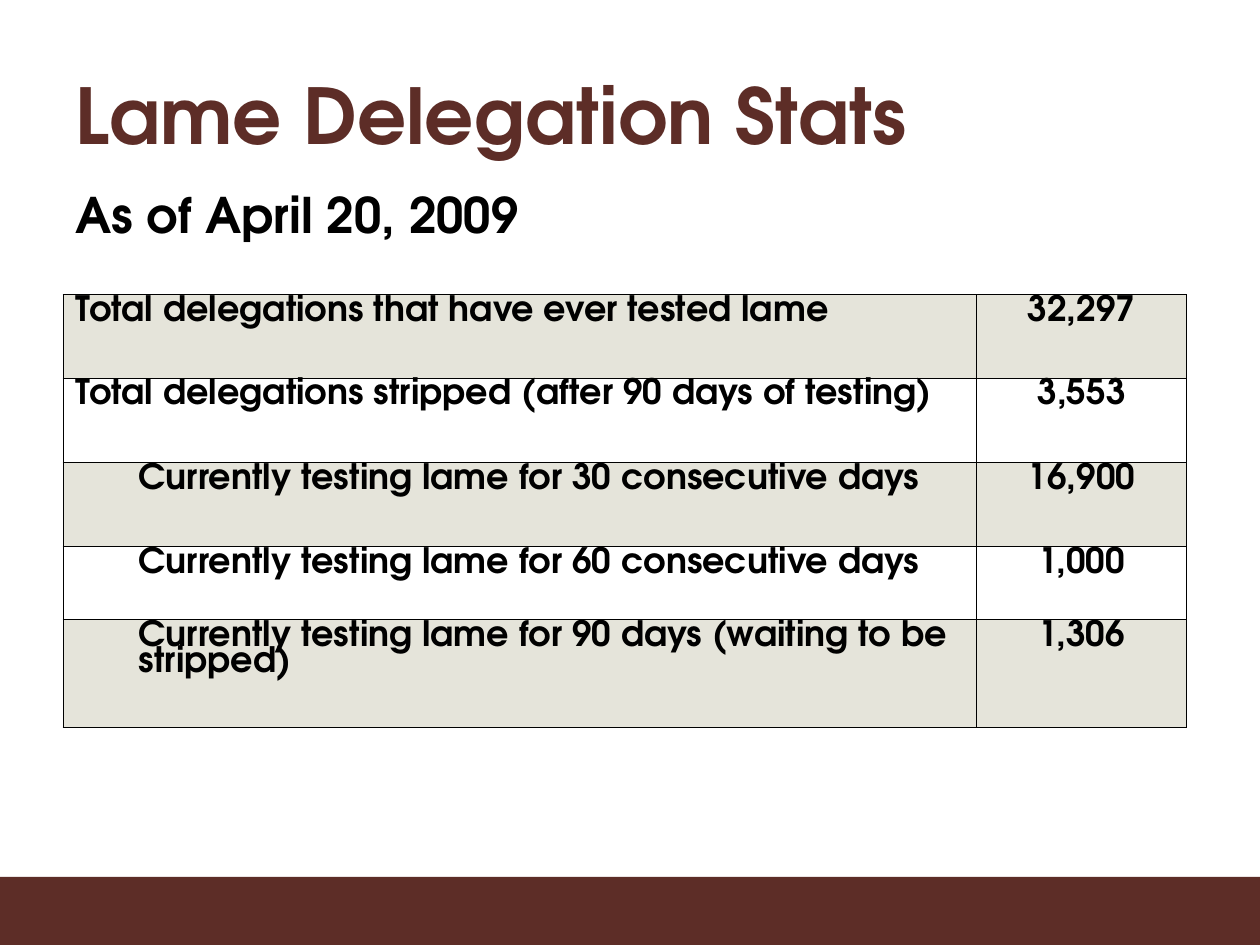
from pptx import Presentation
from pptx import util as u
from pptx.dml.color import RGBColor
from pptx.enum import shapes, text
from pptx.oxml import parse_xml
from pptx.oxml.ns import nsdecls

WIDTH, HEIGHT = u.Inches(10), u.Inches(7.5)
MARGIN = 0.05
FONT = "TeX Gyre Adventor"
BROWN = RGBColor(0x5D, 0x2D, 0x27)
BEIGE = RGBColor(0xE5, 0xE4, 0xDA)
WHITE = RGBColor(0xFF, 0xFF, 0xFF)
BLACK = RGBColor(0, 0, 0)

COLUMNS = (7.25, 1.67)
STATS = (
    ("Total delegations that have ever tested lame", "32,297", 0, 0.66),
    ("Total delegations stripped (after 90 days of testing)", "3,553", 0, 0.67),
    ("Currently testing lame for 30 consecutive days", "16,900", 1, 0.67),
    ("Currently testing lame for 60 consecutive days", "1,000", 1, 0.58),
    ("Currently testing lame for 90 days (waiting to be stripped)", "1,306", 1, 0.85),
)


def area(left, top, width, height):
    return (round(left * WIDTH), round(top * HEIGHT),
            round(width * WIDTH), round(height * HEIGHT))


def write(tf, words, size, color=BLACK):
    p = tf.paragraphs[0]
    p.text = words
    p.font.name, p.font.size, p.font.bold = FONT, u.Pt(size), True
    p.font.color.rgb = color
    return p


def add_band(s, box, color):
    sp = s.shapes.add_shape(shapes.MSO_SHAPE.RECTANGLE, *box)
    sp.shadow.inherit = False
    sp.fill.solid()
    sp.fill.fore_color.rgb = color
    sp.line.fill.background()


def add_heading(s, box, words, size, color, anchor):
    tf = s.shapes.add_textbox(*box).text_frame
    tf.word_wrap = True
    tf.vertical_anchor = anchor
    write(tf, words, size, color)


def add_borders(cell):
    tcPr = cell._tc.get_or_add_tcPr()
    for side in ("lnL", "lnR", "lnT", "lnB"):
        tcPr.append(parse_xml(
            f'<a:{side} {nsdecls("a")} w="{u.Pt(0.5)}"><a:solidFill>'
            f'<a:srgbClr val="{BLACK}"/></a:solidFill></a:{side}>'))


def fill_cell(cell, words, fill):
    add_borders(cell)
    cell.fill.solid()
    cell.fill.fore_color.rgb = fill
    p = write(cell.text_frame, words, 20)
    p.line_spacing = 0.8
    return p


def add_stats(s, box):
    table = s.shapes.add_table(len(STATS), len(COLUMNS), *box).table
    for column, width in zip(table.columns, COLUMNS):
        column.width = u.Inches(width)
    for i, (label, count, level, height) in enumerate(STATS):
        table.rows[i].height = u.Inches(height)
        fill = WHITE if i % 2 else BEIGE
        p = fill_cell(table.cell(i, 0), label, fill)
        p.level = level
        p._p.get_or_add_pPr().set("marL", str(u.Inches(0.5 * level)))
        p = fill_cell(table.cell(i, 1), count, fill)
        p.alignment = text.PP_ALIGN.CENTER


def main():
    prs = Presentation()
    prs.slide_width, prs.slide_height = WIDTH, HEIGHT
    s = prs.slides.add_slide(prs.slide_layouts[6])
    add_band(s, area(0, 0.928, 1, 0.072), BROWN)
    add_heading(s, area(MARGIN, 0.057, 0.9, 0.127), "Lame Delegation Stats",
                44, BROWN, text.MSO_ANCHOR.MIDDLE)
    add_stats(s, area(MARGIN, 0.312, 0.892, 0.457))
    add_heading(s, area(MARGIN, 0.189, 0.95, 0.079), "As of April 20, 2009",
                28, BLACK, text.MSO_ANCHOR.TOP)
    prs.save("out.pptx")


if __name__ == "__main__":
    main()
